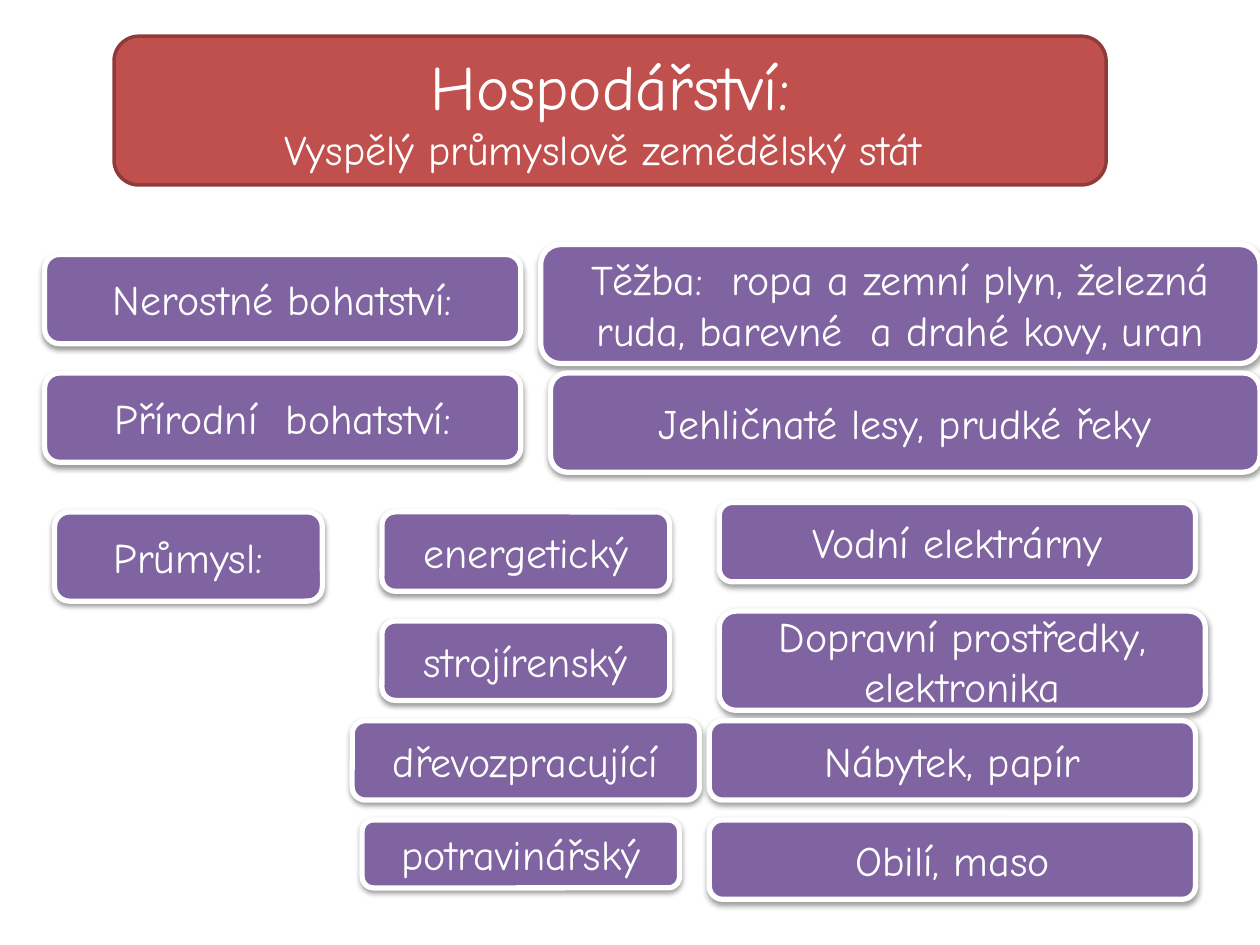
from dataclasses import dataclass

from lxml.etree import SubElement
from pptx import Presentation
from pptx.dml.color import RGBColor
from pptx.enum.shapes import MSO_SHAPE
from pptx.enum.text import MSO_ANCHOR, PP_ALIGN
from pptx.oxml.ns import qn
from pptx.shapes.autoshape import Shape
from pptx.slide import Slide
from pptx.util import Cm, Pt

COLOURS = {
    "purple": "8064A2",
    "red": "C0504D",
    "dark_red": "8E3B39",
    "white": "FFFFFF",
    "black": "000000",
}
FONT = "Comic Neue"
BODY_SIZE = 24
TITLE_SIZE = 36


@dataclass(frozen=True)
class Line:
    text: str
    size: int = BODY_SIZE


@dataclass(frozen=True)
class Box:
    lines: tuple[Line, ...]
    left: float
    top: float
    width: float
    height: float
    fill: str = "purple"
    outline: str = "white"
    outline_width: float = 3
    shadow: bool = True


def label(text: str, left: float, top: float, width: float, height: float) -> Box:
    """Describe a purple box holding one line of text."""
    return Box((Line(text),), left, top, width, height)


TITLE = Box(
    (Line("Hospodářství:", TITLE_SIZE), Line("Vyspělý průmyslově zemědělský stát ")),
    2.3, 0.73, 20, 3, "red", "dark_red", 2, False,
)

BOXES = (
    label("Dopravní prostředky, elektronika", 14.5, 12.32, 9.8, 2),
    label("Nerostné bohatství:", 0.9, 5.13, 9.6, 1.8),
    label("Těžba:  ropa a zemní plyn, železná ruda, barevné  a drahé kovy, uran",
          10.9, 4.93, 14.5, 2.4),
    label("strojírenský", 7.7, 12.52, 5.8, 1.6),
    label("Vodní elektrárny", 14.5, 10.13, 9.6, 1.6),
    label("Přírodní  bohatství:", 0.9, 7.52, 9.6, 1.8),
    label("Jehličnaté lesy, prudké řeky", 11.1, 7.52, 14.3, 2),
    label("dřevozpracující", 7.1, 14.53, 7, 1.6),
    label("Nábytek, papír", 14.3, 14.53, 9.8, 1.6),
    label("potravinářský", 7.3, 16.53, 6.4, 1.37),
    label("Obilí, maso", 14.3, 16.53, 9.8, 1.6),
    TITLE,
    label("Průmysl:", 1.1, 10.32, 5.4, 1.8),
    label("energetický", 7.7, 10.32, 5.8, 1.6),
)


def colour(name: str) -> RGBColor:
    """Look up a named colour."""
    return RGBColor.from_string(COLOURS[name])


def add_shadow(shape: Shape) -> None:
    """Give a shape a soft shadow falling straight down."""
    effects = shape.element.spPr.find(qn("a:effectLst"))
    shadow = SubElement(
        effects, qn("a:outerShdw"), blurRad=str(Pt(3.1)), dist=str(Pt(1.6)),
        dir="5400000", rotWithShape="0",
    )
    shade = SubElement(shadow, qn("a:srgbClr"), val=COLOURS["black"])
    SubElement(shade, qn("a:alpha"), val="38000")


def add_text(shape: Shape, lines: tuple[Line, ...]) -> None:
    """Write centred paragraphs, one for each line."""
    frame = shape.text_frame
    frame.word_wrap = True
    frame.vertical_anchor = MSO_ANCHOR.MIDDLE
    for index, line in enumerate(lines):
        paragraph = frame.add_paragraph() if index else frame.paragraphs[0]
        paragraph.alignment = PP_ALIGN.CENTER
        run = paragraph.add_run()
        run.text = line.text
        run.font.name = FONT
        run.font.size = Pt(line.size)
        run.font.color.rgb = colour("white")


def draw_box(slide: Slide, box: Box) -> None:
    """Draw one rounded box with its text."""
    shape = slide.shapes.add_shape(
        MSO_SHAPE.ROUNDED_RECTANGLE,
        Cm(box.left), Cm(box.top), Cm(box.width), Cm(box.height),
    )
    shape.fill.solid()
    shape.fill.fore_color.rgb = colour(box.fill)
    shape.line.color.rgb = colour(box.outline)
    shape.line.width = Pt(box.outline_width)
    shape.shadow.inherit = False
    if box.shadow:
        add_shadow(shape)
    add_text(shape, box.lines)


def main() -> None:
    """Build and save the slide."""
    presentation = Presentation()
    presentation.slide_width = Cm(25.4)
    presentation.slide_height = Cm(19.05)
    slide = presentation.slides.add_slide(presentation.slide_layouts[6])
    for box in BOXES:
        draw_box(slide, box)
    presentation.save("out.pptx")


if __name__ == "__main__":
    main()
